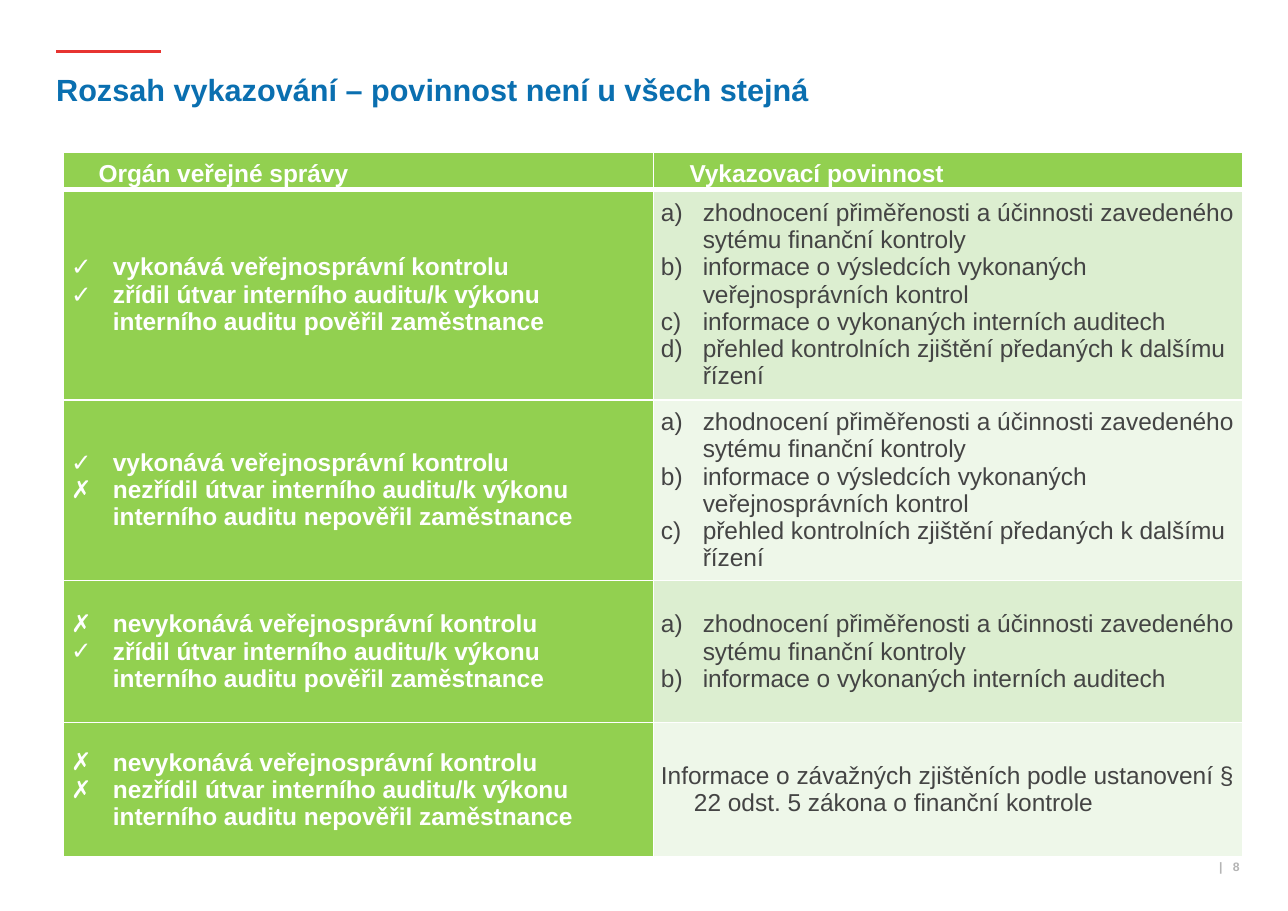
import pptx
import pptx.dml.color
import pptx.enum.shapes
import pptx.enum.text
import pptx.oxml
import pptx.oxml.ns
import pptx.util

RGBColor = pptx.dml.color.RGBColor
Align = pptx.enum.text.PP_ALIGN
Anchor = pptx.enum.text.MSO_ANCHOR
Inches = pptx.util.Inches
Pt = pptx.util.Pt

WHITE = RGBColor(0xFF, 0xFF, 0xFF)
RED = RGBColor(0xE7, 0x34, 0x31)
BLUE = RGBColor(0x0A, 0x6F, 0xB0)
GRAY = RGBColor(0xB4, 0xB4, 0xB4)
DARK = RGBColor(0x44, 0x44, 0x44)
GREEN = RGBColor(0x92, 0xD0, 0x50)
BANDS = (RGBColor(0xDC, 0xEE, 0xD0), RGBColor(0xEE, 0xF7, 0xE9))

FONT = "Arial"
NO_MARGINS = dict.fromkeys(
    ("margin_left", "margin_top", "margin_right", "margin_bottom"), 0)
CELL_FORMAT = NO_MARGINS | {"margin_left": Inches(0.07), "margin_right": Inches(0.07),
                            "vertical_anchor": Anchor.MIDDLE}
HEADER_FORMAT = {"alignment": Align.JUSTIFY, "line_spacing": 1.25,
                 "space_before": Pt(2), "space_after": Pt(2)}

YES, NO, LETTER = "✓", "✗", "a)"
HEADERS = (("Orgán veřejné správy", 0.25), ("Vykazovací povinnost", 0.26))
INSPECTION = {YES: "vykonává veřejnosprávní kontrolu",
              NO: "nevykonává veřejnosprávní kontrolu"}
AUDIT = {YES: "zřídil útvar interního auditu/k výkonu interního auditu pověřil zaměstnance",
         NO: "nezřídil útvar interního auditu/k výkonu interního auditu nepověřil zaměstnance"}
ASSESSMENT = "zhodnocení přiměřenosti a účinnosti zavedeného sytému finanční kontroly"
INSPECTION_RESULTS = "informace o výsledcích vykonaných veřejnosprávních kontrol"
AUDIT_RESULTS = "informace o vykonaných interních auditech"
FINDINGS = "přehled kontrolních zjištění předaných k dalšímu řízení"
SERIOUS_FINDINGS = ("Informace o závažných zjištěních podle ustanovení "
                    "§ 22 odst. 5 zákona o finanční kontrole")
# Inspection mark, audit mark, marker of the duties, duties
DUTIES = (
    (YES, YES, LETTER, (ASSESSMENT, INSPECTION_RESULTS, AUDIT_RESULTS, FINDINGS)),
    (YES, NO, LETTER, (ASSESSMENT, INSPECTION_RESULTS, FINDINGS)),
    (NO, YES, LETTER, (ASSESSMENT, AUDIT_RESULTS)),
    (NO, NO, None, (SERIOUS_FINDINGS,)),
)
COLUMN_WIDTHS = (45.8, 45.8)
ROW_HEIGHTS = (4.11, 23.1, 19.83, 15.6, 14.75)


def apply(target, values):
    for name, value in values.items():
        setattr(target, name, value)


def add_xml(parent, tag, **attributes):
    child = pptx.oxml.parse_xml(f"<{tag} {pptx.oxml.ns.nsdecls('a')}/>")
    for name, value in attributes.items():
        child.set(name, str(value))
    parent.append(child)
    return child


class SlideBuilder:
    """Draws on one slide; lengths are columns and rows of a 100 by 100 grid."""

    def __init__(self, width, height):
        self.presentation = pptx.Presentation()
        apply(self.presentation, {"slide_width": Inches(width), "slide_height": Inches(height)})
        self.column = self.presentation.slide_width / 100
        self.row = self.presentation.slide_height / 100
        self.slide = self.presentation.slides.add_slide(self.presentation.slide_layouts[5])

    def box(self, left, top, width, height):
        return (round(left * self.column), round(top * self.row),
                round(width * self.column), round(height * self.row))

    def add_text(self, paragraph, text, size, color, bold):
        run = paragraph.add_run()
        run.text = text
        apply(run.font, {"name": FONT, "size": Pt(size), "bold": bold})
        run.font.color.rgb = color
        return run

    def indent(self, paragraph, left, hanging=0, marker=None):
        properties = paragraph._p.get_or_add_pPr()
        properties.set("marL", str(Inches(left)))
        properties.set("indent", str(-Inches(hanging)))
        if marker:
            add_xml(properties, "a:buFont", typeface=FONT)
        if marker == LETTER:
            add_xml(properties, "a:buAutoNum", type="alphaLcParenR")
        elif marker:
            add_xml(properties, "a:buChar", char=marker)

    def title(self, text, *place):
        title = self.slide.shapes.title
        apply(title, dict(zip(("left", "top", "width", "height"), self.box(*place))))
        apply(title.text_frame, NO_MARGINS | {"vertical_anchor": Anchor.TOP, "word_wrap": True})
        paragraph = title.text_frame.paragraphs[0]
        paragraph.alignment = Align.LEFT
        self.add_text(paragraph, text, 20, BLUE, True)

    def rule(self, left, top, width):
        x, y, length, _ = self.box(left, top, width, 0)
        line = self.slide.shapes.add_connector(
            pptx.enum.shapes.MSO_CONNECTOR.STRAIGHT, x, y, x + length, y)
        line.line.color.rgb = RED
        line.line.width = Pt(2)
        add_xml(line._element.spPr, "a:effectLst")

    def page_number(self, number, *place):
        frame = self.slide.shapes.add_textbox(*self.box(*place)).text_frame
        apply(frame, NO_MARGINS | {"vertical_anchor": Anchor.MIDDLE, "word_wrap": True})
        paragraph = frame.paragraphs[0]
        paragraph.alignment = Align.RIGHT
        runs = [self.add_text(paragraph, text, 8, GRAY, True) for text in ("|", " ", number)]
        runs[1].font._element.set("spc", "450")

    def table(self, left, top, widths, heights):
        place = self.box(left, top, sum(widths), sum(heights))
        table = self.slide.shapes.add_table(len(heights), len(widths), *place).table
        apply(table, {"first_row": False, "horz_banding": False})
        for column, width in zip(table.columns, widths):
            column.width = round(width * self.column)
        for row, height in zip(table.rows, heights):
            row.height = round(height * self.row)
        return table

    def cell(self, cell, fill, thick_side=None):
        """Formats a cell with white borders, one of them optionally thick."""
        apply(cell, CELL_FORMAT)
        properties = cell._tc.get_or_add_tcPr()
        for side in "LRTB":
            width = Pt(3 if side == thick_side else 1)
            border = add_xml(properties, f"a:ln{side}", w=width)
            add_xml(add_xml(border, "a:solidFill"), "a:srgbClr", val=WHITE)
        cell.fill.solid()
        cell.fill.fore_color.rgb = fill

    def cell_list(self, cell, items, color, bold):
        """Fills a cell with (marker, text) items."""
        frame = cell.text_frame
        for index, (marker, text) in enumerate(items):
            paragraph = frame.add_paragraph() if index else frame.paragraphs[0]
            paragraph.alignment = Align.LEFT
            hanging = 0.38 if marker else 0.3
            self.indent(paragraph, hanging, hanging, marker)
            self.add_text(paragraph, text, 16, color, bold)


def main():
    builder = SlideBuilder(11.69, 8.27)
    builder.rule(4.36, 5.68, 8.13)
    builder.title("Rozsah vykazování – povinnost není u všech stejná", 4.36, 7.74, 84.09, 4.11)
    builder.page_number("8", 81.44, 94.32, 14.8, 1.57)

    table = builder.table(4.92, 16.69, COLUMN_WIDTHS, ROW_HEIGHTS)
    for column, (text, left) in enumerate(HEADERS):
        cell = table.cell(0, column)
        builder.cell(cell, GREEN, "B")
        paragraph = cell.text_frame.paragraphs[0]
        apply(paragraph, HEADER_FORMAT)
        builder.indent(paragraph, left)
        builder.add_text(paragraph, text, 16, WHITE, True)

    for row, (inspection, audit, marker, duties) in enumerate(DUTIES, start=1):
        body, duty = table.cell(row, 0), table.cell(row, 1)
        thick_side = "T" if row == 1 else None
        builder.cell(body, GREEN, thick_side)
        builder.cell(duty, BANDS[(row - 1) % 2], thick_side)
        marks = ((inspection, INSPECTION[inspection]), (audit, AUDIT[audit]))
        builder.cell_list(body, marks, WHITE, True)
        builder.cell_list(duty, [(marker, text) for text in duties], DARK, False)

    builder.presentation.save("out.pptx")


if __name__ == "__main__":
    main()
